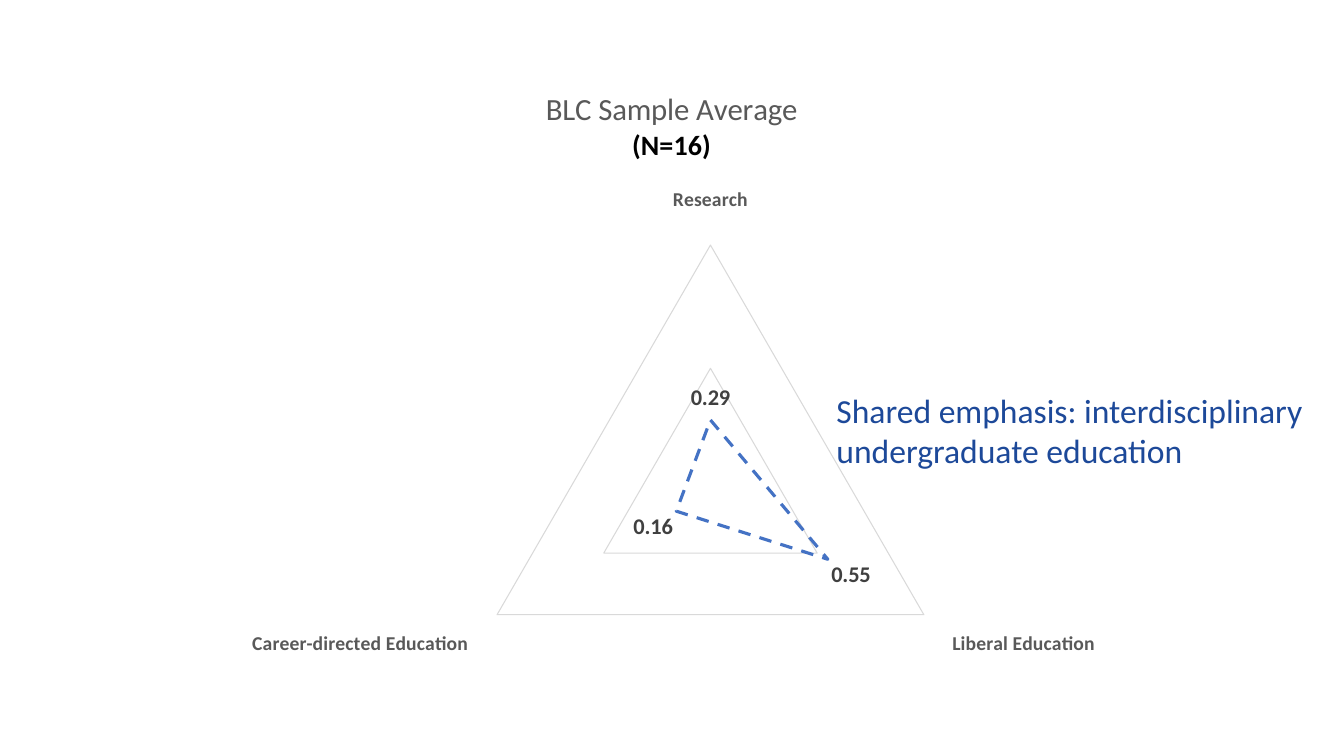
from lxml.etree import SubElement
from pptx import Presentation
from pptx.chart.data import CategoryChartData
from pptx.dml.color import RGBColor
from pptx.enum.chart import XL_CHART_TYPE, XL_TICK_MARK
from pptx.enum.dml import MSO_LINE
from pptx.enum.text import MSO_AUTO_SIZE
from pptx.oxml.ns import qn
from pptx.util import Cm, Pt

COLORS = {
    "black": "000000",
    "title": "595959",
    "label": "404040",
    "grid": "D9D9D9",
    "series": "4472C4",
    "callout": "1D4999",
}
EMPHASIS = {"Research": 0.29, "Liberal Education": 0.55, "Career-directed Education": 0.16}


def format_font(font, size, color, bold=False):
    font.name = "Calibri"
    font.size = Pt(size)
    font.bold = bold
    font.color.rgb = RGBColor.from_string(COLORS[color])


def format_line(line, color, width):
    line.color.rgb = RGBColor.from_string(COLORS[color])
    line.width = Pt(width)


def write_text(paragraph, text, **font_format):
    run = paragraph.add_run()
    run.text = text
    format_font(run.font, **font_format)


def place_plot(chart, **fractions):
    """Fix the inner plot area, in fractions of the chart's size."""
    layout = chart.element.find(".//" + qn("c:plotArea")).find(qn("c:layout"))
    if layout is None:
        plot_area = chart.element.find(".//" + qn("c:plotArea"))
        layout = SubElement(plot_area, qn("c:layout"))
        plot_area.insert(0, layout)
    manual = SubElement(layout, qn("c:manualLayout"))
    settings = {"layoutTarget": "inner", "xMode": "edge", "yMode": "edge", **fractions}
    for name, value in settings.items():
        SubElement(manual, qn("c:" + name)).set("val", str(value))


def add_radar(slide, left, top, width, height):
    data = CategoryChartData(number_format="#,##0.00")
    data.categories = list(EMPHASIS)
    data.add_series("Series 1", list(EMPHASIS.values()))
    chart = slide.shapes.add_chart(
        XL_CHART_TYPE.RADAR, left, top, width, height, data).chart
    chart.has_legend = False
    format_font(chart.font, size=10, color="black")
    place_plot(chart, x=0.34, y=0.26, w=0.38, h=0.72)

    # Title
    title = chart.chart_title.text_frame
    write_text(title.paragraphs[0], "BLC Sample Average", size=22, color="title")
    write_text(title.add_paragraph(), "(N=16)", size=20, color="black", bold=True)
    chart.chart_title.include_in_layout = False

    # Axes
    category_axis = chart.category_axis
    category_axis.has_major_gridlines = False
    category_axis.major_tick_mark = XL_TICK_MARK.NONE
    format_font(category_axis.tick_labels.font, size=14, color="title", bold=True)
    format_line(category_axis.format.line, "grid", 0.75)
    value_axis = chart.value_axis
    value_axis.minimum_scale, value_axis.maximum_scale = 0, 1
    value_axis.major_unit = 0.5
    value_axis.has_major_gridlines = True
    format_line(value_axis.major_gridlines.format.line, "grid", 0.75)
    value_axis.visible = False

    # Series and its labels
    plot = chart.plots[0]
    plot.vary_by_categories = False
    series = plot.series[0]
    format_line(series.format.line, "series", 2.25)
    series.format.line.dash_style = MSO_LINE.DASH
    labels = series.data_labels
    labels.show_value = True
    labels.number_format = "#,##0.00"
    labels.number_format_is_linked = False
    format_font(labels.font, size=16, color="label", bold=True)


def add_callout(slide, text, left, top, width, height):
    text_frame = slide.shapes.add_textbox(left, top, width, height).text_frame
    text_frame.word_wrap = True
    text_frame.auto_size = MSO_AUTO_SIZE.SHAPE_TO_FIT_TEXT
    write_text(text_frame.paragraphs[0], text, size=24, color="callout")


def main():
    presentation = Presentation()
    presentation.slide_width, presentation.slide_height = Cm(33.87), Cm(19.05)
    slide = presentation.slides.add_slide(presentation.slide_layouts[6])
    add_radar(slide, Cm(0.58), Cm(1.68), Cm(32.69), Cm(17.27))
    add_callout(slide, "Shared emphasis: interdisciplinary undergraduate education",
                Cm(20.83), Cm(9.7), Cm(12.73), Cm(2.31))
    presentation.save("out.pptx")


if __name__ == "__main__":
    main()
